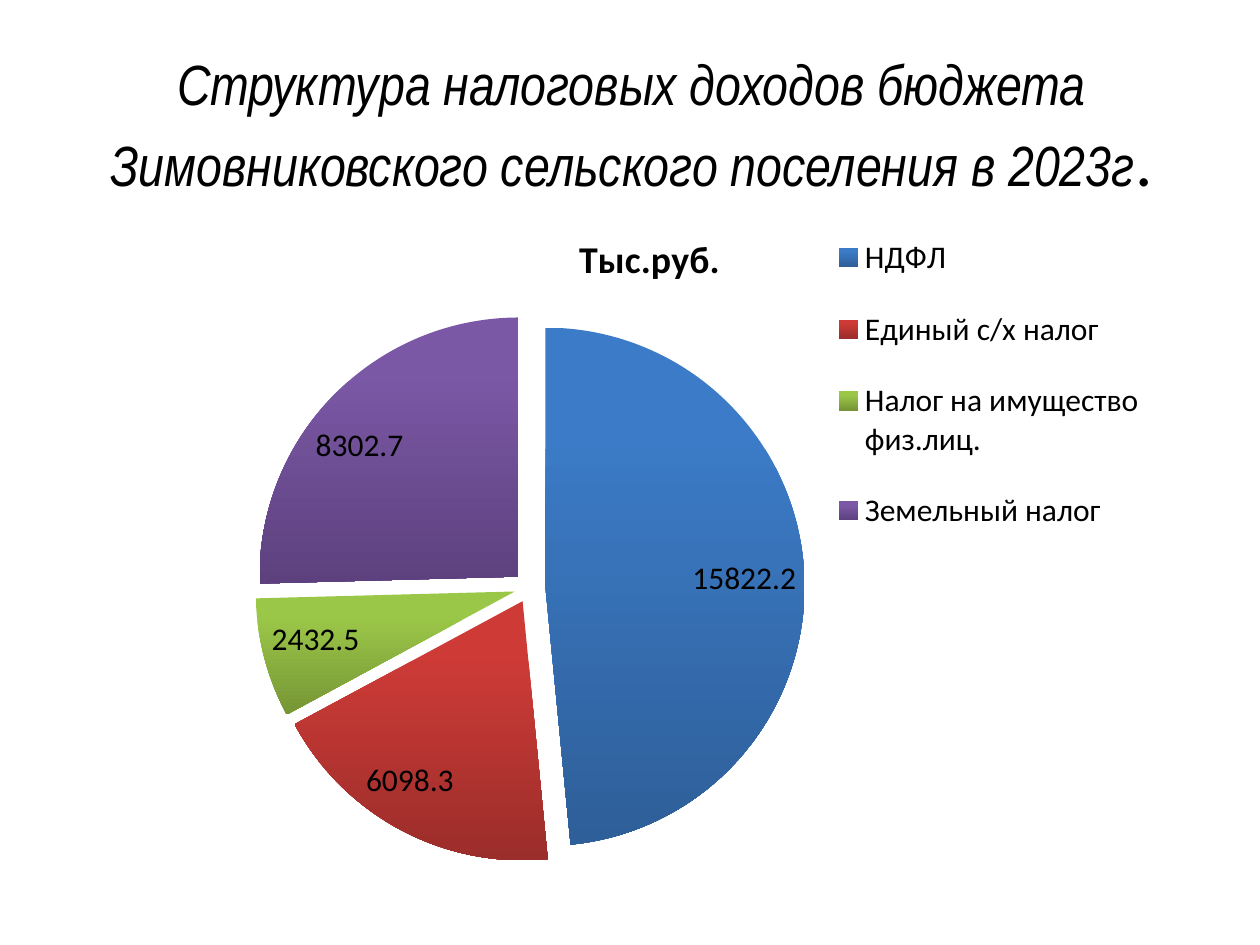
from pptx import Presentation, util as u
from pptx.chart.data import CategoryChartData
from pptx.dml.color import RGBColor
from pptx.enum import chart as ch, text
from pptx.oxml import parse_xml
from pptx.oxml.ns import nsdecls, qn

# category, value, gradient top, gradient bottom
TAXES = [
    ("НДФЛ", 15822.2, "3C7BC7", "2E5F99"),
    ("Единый с/х налог", 6098.3, "CE3B37", "9B2D2A"),
    ("Налог на имущество физ.лиц.", 2432.5, "9BC748", "769535"),
    ("Земельный налог", 8302.7, "7B58A6", "5D417E"),
]


def rgb(value):
    return RGBColor.from_string(value)


def set_font(font, size, name="Calibri", color="000000", bold=False, italic=False):
    font.size, font.name = u.Pt(size), name
    font.bold, font.italic = bold, italic
    font.color.rgb = rgb(color)


def add_run(p, content, **fmt):
    r = p.add_run()
    r.text = content
    set_font(r.font, **fmt)


def set_layout(parent, after, x, y, w, h, target=""):
    """Place a chart part by percentages of the chart box."""
    for old in parent.findall(qn("c:layout")):
        parent.remove(old)
    parts = "".join(f'<c:{tag} val="{val / 100:.3f}"/>' for tag, val in
                    [("x", x), ("y", y), ("w", w), ("h", h)])
    layout = parse_xml(f'<c:layout {nsdecls("c")}><c:manualLayout>{target}'
                       f'<c:xMode val="edge"/><c:yMode val="edge"/>'
                       f'{parts}</c:manualLayout></c:layout>')
    parent.insert(0 if after is None else parent.index(after) + 1, layout)


def add_title(s, x, y, w, h):
    tf = s.shapes.add_textbox(x, y, w, h).text_frame
    tf.word_wrap = True
    tf.vertical_anchor = text.MSO_ANCHOR.MIDDLE
    p = tf.paragraphs[0]
    p.alignment = text.PP_ALIGN.CENTER
    add_run(p, "Структура налоговых доходов бюджета Зимовниковского "
               "сельского поселения в 2023г",
            size=32.4, name="Arial Narrow", italic=True)
    add_run(p, ".", size=39.6)


def add_tax_pie(s, x, y, w, h):
    data = CategoryChartData()
    data.categories = [tax[0] for tax in TAXES]
    data.add_series("Тыс.руб.", [tax[1] for tax in TAXES])
    chart = s.shapes.add_chart(ch.XL_CHART_TYPE.PIE, x, y, w, h, data).chart
    set_font(chart.font, 18)

    # Heading
    chart.has_title = True
    add_run(chart.chart_title.text_frame.paragraphs[0], "Тыс.руб.",
            size=21.6, bold=True)
    chart.chart_title.include_in_layout = False

    # Slices
    plot = chart.plots[0]
    plot.vary_by_categories = True
    series = plot.series[0]
    for i, (_, _, top, bottom) in enumerate(TAXES):
        fill = series.points[i].format.fill
        fill.gradient()
        fill.gradient_angle = 270
        for stop, color, position in zip(fill.gradient_stops, (top, bottom), (0.2, 1)):
            stop.color.rgb = rgb(color)
            stop.position = position
    first_point = series._element.find(qn("c:dPt"))
    first_point.addprevious(parse_xml(f'<c:explosion {nsdecls("c")} val="6"/>'))

    # Value labels
    plot.has_data_labels = True
    labels = plot.data_labels
    labels.show_value, labels.show_percentage = True, False
    labels.position = ch.XL_LABEL_POSITION.BEST_FIT
    set_font(labels.font, 18)

    # Legend and plot positions
    chart.has_legend = True
    legend = chart.legend
    legend.position = ch.XL_LEGEND_POSITION.RIGHT
    legend.include_in_layout = False
    set_font(legend.font, 18)
    box = legend._element
    set_layout(box, box.find(qn("c:legendPos")), 62.5, 0, 34, 51)
    set_layout(plot._element.getparent(), None, 15.6, 15.4, 48, 78,
               '<c:layoutTarget val="inner"/>')


def main():
    prs = Presentation()
    prs.slide_width, prs.slide_height = u.Cm(25.4), u.Cm(19.05)
    s = prs.slides.add_slide(prs.slide_layouts[6])
    add_title(s, u.Cm(1.3), u.Cm(0.92), u.Cm(22.86), u.Cm(3.18))
    add_tax_pie(s, u.Cm(1.5), u.Cm(4.12), u.Cm(23.19), u.Cm(14.2))
    prs.save("out.pptx")


if __name__ == "__main__":
    main()
